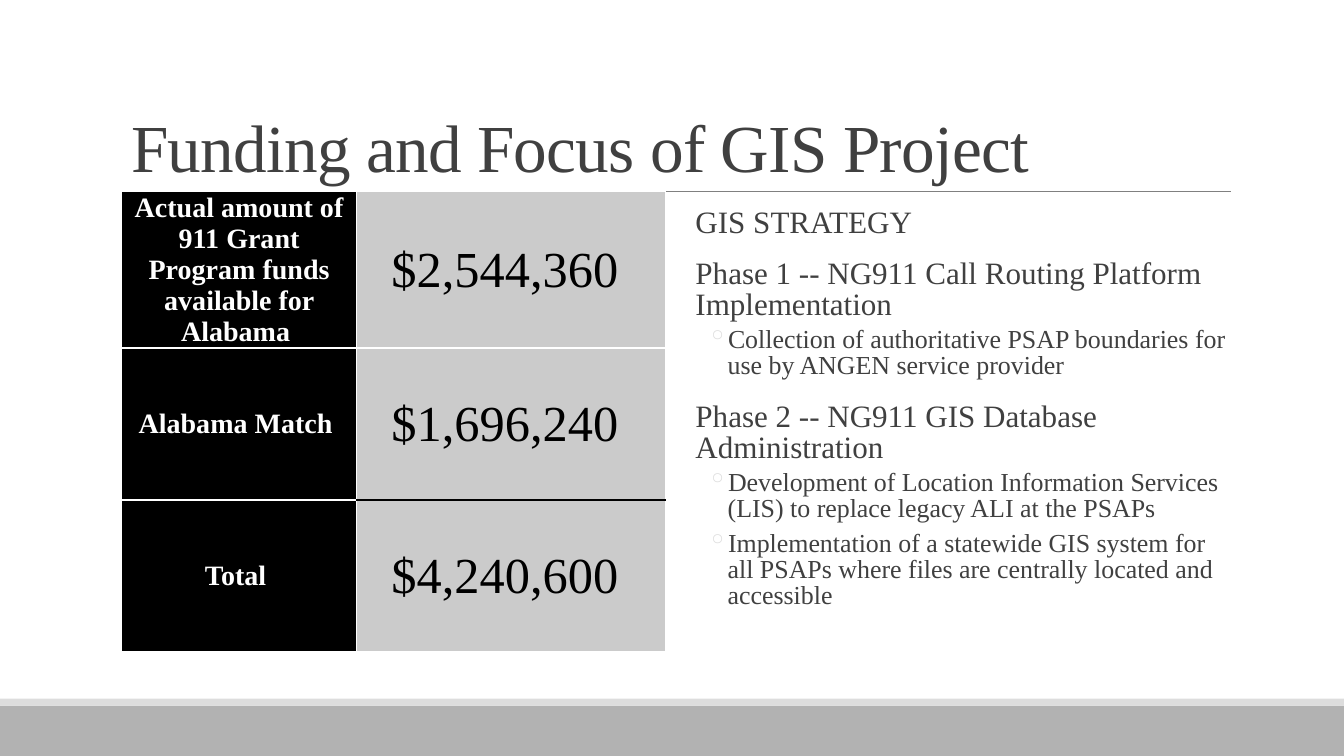
from lxml.etree import SubElement as Sub
from pptx import Presentation
from pptx.dml.color import RGBColor
from pptx.enum.shapes import MSO_CONNECTOR as Conn, MSO_SHAPE as Shape
from pptx.enum.text import MSO_ANCHOR as Anchor, MSO_AUTO_SIZE as Auto, PP_ALIGN as Align
from pptx.oxml.ns import qn
from pptx.util import Pt

BLACK = RGBColor(0, 0, 0)
WHITE = RGBColor(0xFF, 0xFF, 0xFF)
INK = RGBColor(0x40, 0x40, 0x40)
RULE = RGBColor(0x80, 0x80, 0x80)
BAND = RGBColor(0xB2, 0xB2, 0xB2)
PALE = RGBColor(0xDD, 0xDD, 0xDD)
CELL = RGBColor(0xCB, 0xCB, 0xCB)

THIN, THICK, DARK = (WHITE, 1), (WHITE, 1.5), (BLACK, 1)

FUNDS = [
    ("Actual amount of 911 Grant Program funds available for Alabama ", "$2,544,360 "),
    ("Alabama Match ", "$1,696,240 "),
    ("Total ", "$4,240,600 "),
]
# Top and bottom edges of each amount cell
EDGES = [(THICK, THICK), (THICK, DARK), (DARK, THIN)]

PLAN = [
    (0, "GIS STRATEGY"),
    (0, "Phase 1 -- NG911 Call Routing Platform Implementation"),
    (1, "Collection of authoritative PSAP boundaries for use by ANGEN service provider"),
    (0, "Phase 2 -- NG911 GIS Database Administration"),
    (1, "Development of Location Information Services (LIS) to replace legacy ALI at the PSAPs"),
    (1, "Implementation of a statewide GIS system for all PSAPs where files are "
        "centrally located and accessible"),
]


def fill_xml(parent, color):
    Sub(Sub(parent, qn("a:solidFill")), qn("a:srgbClr"), val=str(color))


class Deck:
    face = "Times New Roman"

    def __init__(self):
        self.prs = Presentation()
        self.prs.slide_width, self.prs.slide_height = Pt(960), Pt(540)
        self.slide = self.prs.slides.add_slide(self.prs.slide_layouts[5])
        self.shapes = self.slide.shapes

    def font(self, para, size, color, bold=False):
        font = para.font
        font.name, font.size, font.bold = self.face, Pt(size), bold
        font.color.rgb = color

    def band(self, top, height, color):
        bar = self.shapes.add_shape(Shape.RECTANGLE, 0, Pt(top), Pt(960), Pt(height))
        bar.shadow.inherit = False
        bar.fill.solid()
        bar.fill.fore_color.rgb = color
        bar.line.fill.background()

    def rule(self, left, right, y):
        line = self.shapes.add_connector(Conn.STRAIGHT, Pt(left), Pt(y), Pt(right), Pt(y))
        line.line.color.rgb, line.line.width = RULE, Pt(0.5)
        Sub(line._element.spPr, qn("a:effectLst"))

    def title(self, text, left, top, width, height):
        box = self.shapes.title
        box.left, box.top, box.width, box.height = Pt(left), Pt(top), Pt(width), Pt(height)
        frame = box.text_frame
        frame.text = text
        frame.vertical_anchor, frame.auto_size = Anchor.BOTTOM, Auto.NONE
        para = frame.paragraphs[0]
        para.alignment, para.line_spacing = Align.LEFT, 0.85
        self.font(para, 48, INK)
        para.runs[0]._r.get_or_add_rPr().set("spc", "-50")

    def cell(self, cell, text, size, color, fill, bold, top, bottom):
        cell.text = text
        cell.vertical_anchor = Anchor.MIDDLE
        cell.margin_left = cell.margin_right = cell.margin_top = Pt(0.72)
        cell.margin_bottom = 0
        para = cell.text_frame.paragraphs[0]
        para.alignment = Align.CENTER
        self.font(para, size, color, bold)
        props = cell._tc.get_or_add_tcPr()
        for side, (tint, width) in zip("LRTB", (THIN, THIN, top, bottom)):
            fill_xml(Sub(props, qn(f"a:ln{side}"), w=str(Pt(width))), tint)
        cell.fill.solid()
        cell.fill.fore_color.rgb = fill

    def table(self, left, top, widths, height):
        grid = self.shapes.add_table(len(FUNDS), len(widths), Pt(left), Pt(top),
                                     Pt(sum(widths)), Pt(height * len(FUNDS))).table
        grid.first_row = grid.horz_banding = False
        for col, width in zip(grid.columns, widths):
            col.width = Pt(width)
        for i, ((label, sum_), (above, below)) in enumerate(zip(FUNDS, EDGES)):
            grid.rows[i].height = Pt(height)
            last = THICK if i == len(FUNDS) - 1 else THIN
            self.cell(grid.cell(i, 0), label, 20, WHITE, BLACK, True, THIN, last)
            self.cell(grid.cell(i, 1), sum_, 36, BLACK, CELL, False, above, below)

    def plan(self, left, top, width, height):
        frame = self.shapes.add_textbox(Pt(left), Pt(top), Pt(width), Pt(height)).text_frame
        frame.word_wrap = True
        frame.margin_left = frame.margin_right = 0
        frame.margin_top = frame.margin_bottom = Pt(3.6)
        for i, (level, text) in enumerate(PLAN):
            para = frame.add_paragraph() if i else frame.paragraphs[0]
            para.text, para.level, para.line_spacing = text, level, 0.84
            size, before, after, indent = (18.5, 2, 4, 30.2) if level else (22.2, 12, 2, 7.2)
            para.space_before, para.space_after = Pt(before), Pt(after)
            self.font(para, size, INK)
            props = para._p.get_or_add_pPr()
            props.set("marL", str(Pt(indent)))
            if level:
                props.set("indent", str(Pt(-14.4)))
                tint = props.makeelement(qn("a:buClr"))
                Sub(tint, qn("a:srgbClr"), val=str(PALE))
                mark = props.makeelement(qn("a:buChar"), char="◦")
                run = props.find(qn("a:defRPr"))
                run.addprevious(tint)
                run.addprevious(mark)


def main():
    deck = Deck()
    deck.band(504, 36, BAND)
    deck.band(499, 5, PALE)
    deck.rule(94.3, 879, 136.8)
    deck.title("Funding and Focus of GIS Project", 86.4, 22.3, 792, 114.5)
    deck.table(86.7, 136.8, (168.2, 220.5), 108.6)
    deck.plan(489.6, 145.4, 388.8, 316.8)
    deck.prs.save("out.pptx")


if __name__ == "__main__":
    main()
